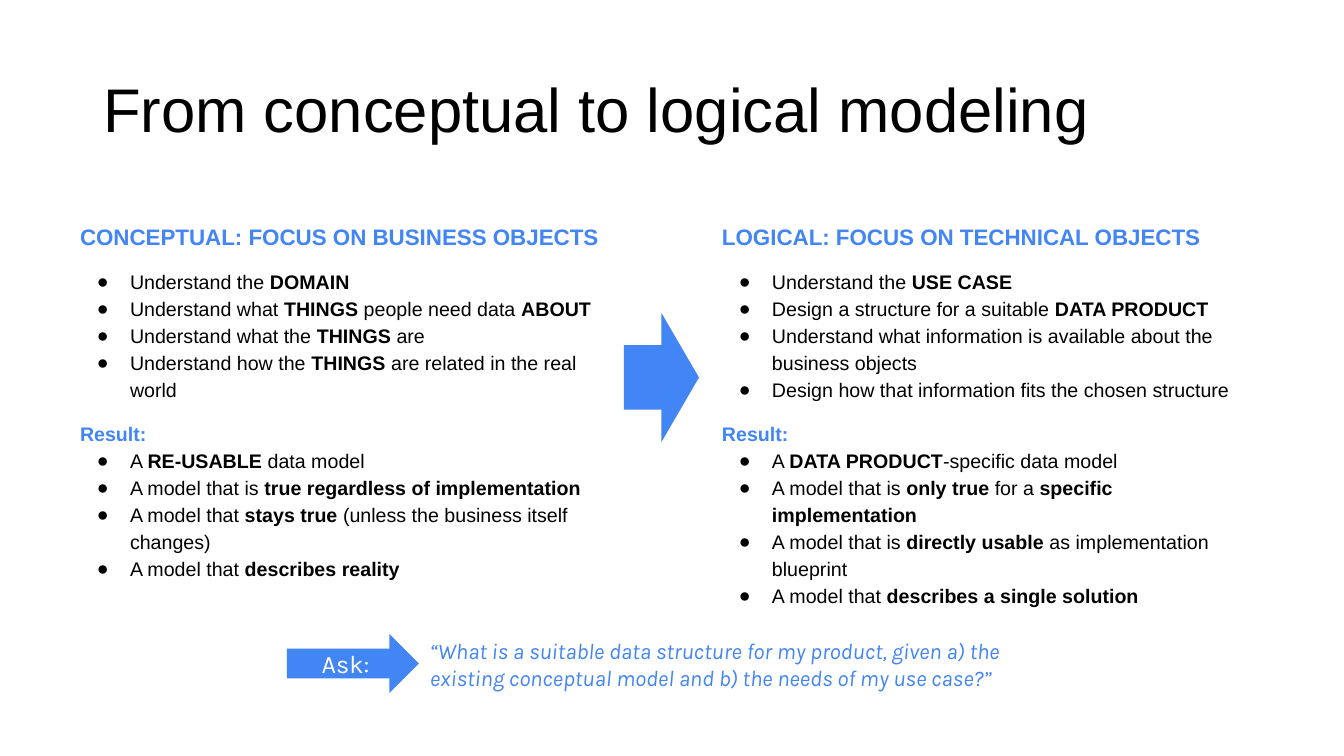
"""Builds a slide comparing conceptual and logical data modeling."""
import pptx
import pptx.util
import pptx.dml.color
import pptx.enum.shapes
import pptx.enum.text
import pptx.oxml
import pptx.oxml.ns

COLORS = {"accent": "4285F4", "text": "000000", "white": "FFFFFF"}
TITLE = "From conceptual to logical modeling"
COLUMNS = [
    {
        "left": 70,
        "heading": "CONCEPTUAL: FOCUS ON BUSINESS OBJECTS",
        "focus": [
            "Understand the **DOMAIN**",
            "Understand what **THINGS** people need data **ABOUT**",
            "Understand what the **THINGS** are",
            "Understand how the **THINGS** are related in the real world",
        ],
        "result": [
            "A **RE-USABLE **data model",
            "A model that is **true regardless of implementation**",
            "A model that **stays true** (unless the business itself changes)",
            "A model that **describes reality**",
        ],
    },
    {
        "left": 712,
        "heading": "LOGICAL: FOCUS ON TECHNICAL OBJECTS",
        "focus": [
            "Understand the **USE CASE**",
            "Design a structure for a suitable **DATA PRODUCT**",
            "Understand what information is available about the business objects",
            "Design how that information fits the chosen structure",
        ],
        "result": [
            "A **DATA PRODUCT**-specific data model",
            "A model that is **only true** for a **specific implementation**",
            "A model that is **directly usable** as implementation blueprint",
            "A model that **describes a single solution**",
        ],
    },
]
RESULT = "Result:"
ASK = "Ask:"
QUESTION = ("“What is a suitable data structure for my product, given a) the "
            "existing conceptual model and b) the needs of my use case?”")

TITLE_BOX = (93, 40, 1159, 146)
COLUMN_TOP, COLUMN_W, COLUMN_H = 209, 545, 442
STEP_ARROW = (624, 313, 75, 129)
ASK_ARROW = (287, 634, 132, 59)
QUESTION_BOX = (420, 632, 625, 65)
INSET, INDENT, HANGING = 10, 50, -33
EMU_PER_PX = 914400 / 100.8

HEADING = {"name": "Arial", "size": 16, "bold": True, "color": "accent"}
LABEL = {**HEADING, "size": 14}
ITEM = {"name": "Arial", "size": 14, "bold": False, "color": "text"}
ALIGN = pptx.enum.text.PP_ALIGN
ANCHOR = pptx.enum.text.MSO_ANCHOR
AUTO_SIZE = pptx.enum.text.MSO_AUTO_SIZE


def px(n):
    return pptx.util.Emu(round(n * EMU_PER_PX))


def rgb(name):
    return pptx.dml.color.RGBColor.from_string(COLORS[name])


def place(sp, box):
    for key, n in zip(("left", "top", "width", "height"), box):
        setattr(sp, key, px(n))


def add_run(p, text, fmt):
    r = p.add_run()
    r.text = text
    for key, value in fmt.items():
        if key == "color":
            r.font.color.rgb = rgb(value)
        else:
            setattr(r.font, key, pptx.util.Pt(value) if key == "size" else value)


def set_bullet(p, bulleted):
    pPr = p._p.get_or_add_pPr()
    pPr.set("marL", str(px(INDENT) if bulleted else 0))
    pPr.set("indent", str(px(HANGING) if bulleted else 0))
    ns = pptx.oxml.ns.nsdecls("a")
    parts = [f"<a:buNone {ns}/>"]
    if bulleted:
        parts = [f'<a:buClr {ns}><a:srgbClr val="{COLORS["text"]}"/></a:buClr>',
                 f'<a:buFont {ns} typeface="Arial"/>',
                 f'<a:buChar {ns} char="●"/>']
    for part in parts:
        pPr.append(pptx.oxml.parse_xml(part))


def fill_column(sp, column):
    place(sp, (column["left"], COLUMN_TOP, COLUMN_W, COLUMN_H))
    tf = sp.text_frame
    settings = {"word_wrap": True, "auto_size": AUTO_SIZE.NONE, "vertical_anchor": ANCHOR.TOP}
    settings.update({f"margin_{side}": px(INSET) for side in ("left", "top", "right", "bottom")})
    for key, value in settings.items():
        setattr(tf, key, value)
    lines = [(column["heading"], HEADING, False, 0)]
    lines += [(t, ITEM, True, 0 if i else 12) for i, t in enumerate(column["focus"])]
    lines += [(RESULT, LABEL, False, 12)]
    lines += [(t, ITEM, True, 0) for t in column["result"]]
    for i, (text, fmt, bulleted, before) in enumerate(lines):
        p = tf.add_paragraph() if i else tf.paragraphs[0]
        set_bullet(p, bulleted)
        p.alignment = ALIGN.LEFT
        p.line_spacing = 1.15
        p.space_before = pptx.util.Pt(before)
        for j, part in enumerate(text.split("**")):
            if part:
                add_run(p, part, {**fmt, "bold": fmt["bold"] or j % 2 == 1})


def add_arrow(s, box):
    sp = s.shapes.add_shape(pptx.enum.shapes.MSO_SHAPE.RIGHT_ARROW, *map(px, box))
    sp.shadow.inherit = False
    sp.fill.solid()
    sp.fill.fore_color.rgb = rgb("accent")
    sp.line.fill.background()
    return sp


def main():
    prs = pptx.Presentation()
    prs.slide_width, prs.slide_height = px(1344), px(756)
    s = prs.slides.add_slide(prs.slide_layouts[3])

    title = s.shapes.title
    place(title, TITLE_BOX)
    tf = title.text_frame
    tf.vertical_anchor = ANCHOR.MIDDLE
    tf.auto_size = AUTO_SIZE.NONE
    p = tf.paragraphs[0]
    p.alignment = ALIGN.LEFT
    p.line_spacing = 0.9
    add_run(p, TITLE, {"name": "Arial", "size": 44, "color": "text"})

    for idx, column in enumerate(COLUMNS, 1):
        fill_column(s.placeholders[idx], column)

    add_arrow(s, STEP_ARROW)
    tf = add_arrow(s, ASK_ARROW).text_frame
    tf.vertical_anchor = ANCHOR.MIDDLE
    p = tf.paragraphs[0]
    p.alignment = ALIGN.CENTER
    add_run(p, ASK, {"name": "Karla", "size": 18, "color": "white"})

    tf = s.shapes.add_textbox(*map(px, QUESTION_BOX)).text_frame
    tf.word_wrap = True
    tf.auto_size = AUTO_SIZE.SHAPE_TO_FIT_TEXT
    add_run(tf.paragraphs[0], QUESTION,
            {"name": "Karla", "size": 16, "italic": True, "color": "accent"})

    prs.save("out.pptx")


if __name__ == "__main__":
    main()
